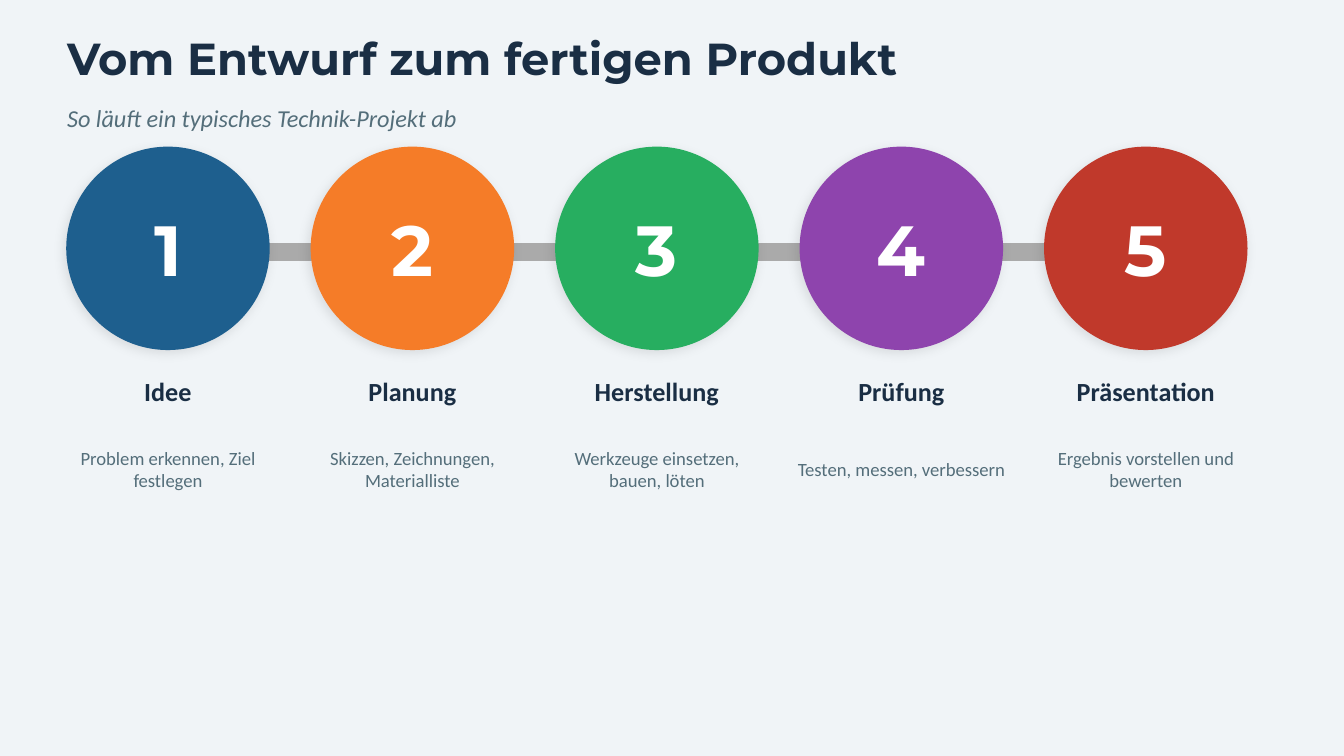
"""Build a slide showing the five steps of a technical project."""
from lxml import etree
from pptx import Presentation, util as u
from pptx.dml.color import RGBColor
from pptx.enum import shapes, text
from pptx.oxml.ns import qn

BACKGROUND = RGBColor(0xF0, 0xF4, 0xF7)
NAVY = RGBColor(0x1A, 0x2E, 0x44)
SLATE = RGBColor(0x54, 0x6E, 0x7A)
GREY = RGBColor(0xAA, 0xAA, 0xAA)
WHITE = RGBColor(0xFF, 0xFF, 0xFF)
BLUE = RGBColor(0x1E, 0x5F, 0x8E)
ORANGE = RGBColor(0xF5, 0x7C, 0x28)
GREEN = RGBColor(0x27, 0xAE, 0x60)
PURPLE = RGBColor(0x8E, 0x44, 0xAD)
RED = RGBColor(0xC0, 0x39, 0x2B)

STEPS = [
    ("Idee", "Problem erkennen, Ziel festlegen", BLUE),
    ("Planung", "Skizzen, Zeichnungen, Materialliste", ORANGE),
    ("Herstellung", "Werkzeuge einsetzen, bauen, löten", GREEN),
    ("Prüfung", "Testen, messen, verbessern", PURPLE),
    ("Präsentation", "Ergebnis vorstellen und bewerten", RED),
]
LEFT, PITCH, DIAMETER, LABEL_W = 1.27, 4.62, 3.81, 4.06


def write(sp, content, size, color, font="Calibri", bold=False, italic=False,
          align=text.PP_ALIGN.CENTER):
    tf = sp.text_frame
    tf.word_wrap = True
    tf.auto_size = text.MSO_AUTO_SIZE.NONE
    tf.vertical_anchor = text.MSO_ANCHOR.MIDDLE
    tf.margin_left = tf.margin_right = tf.margin_top = tf.margin_bottom = 0
    p = tf.paragraphs[0]
    p.alignment = align
    r = p.add_run()
    r.text = content
    r.font.name, r.font.size = font, u.Pt(size)
    r.font.bold, r.font.italic = bold, italic
    r.font.color.rgb = color


def add_solid(s, kind, x, y, w, h, color):
    sp = s.shapes.add_shape(kind, u.Cm(x), u.Cm(y), u.Cm(w), u.Cm(h))
    sp.shadow.inherit = False
    sp.fill.solid()
    sp.fill.fore_color.rgb = color
    sp.line.color.rgb = color
    sp.line.width = u.Pt(1)
    return sp


prs = Presentation()
prs.slide_width, prs.slide_height = u.Cm(25.4), u.Cm(14.29)
s = prs.slides.add_slide(prs.slide_layouts[5])
s.background.fill.solid()
s.background.fill.fore_color.rgb = BACKGROUND

title = s.shapes.title
title.left, title.top = u.Cm(LEFT), u.Cm(0.38)
title.width, title.height = u.Cm(22.86), u.Cm(1.4)
write(title, "Vom Entwurf zum fertigen Produkt", 24, NAVY, font="Montserrat",
      bold=True, align=text.PP_ALIGN.LEFT)

subtitle = s.shapes.add_textbox(u.Cm(LEFT), u.Cm(1.83), u.Cm(22.86), u.Cm(0.81))
write(subtitle, "So läuft ein typisches Technik-Projekt ab", 13, SLATE,
      italic=True, align=text.PP_ALIGN.LEFT)

for i, (name, detail, color) in enumerate(STEPS):
    x = LEFT + i * PITCH
    if i < len(STEPS) - 1:
        add_solid(s, shapes.MSO_SHAPE.RECTANGLE, x + 3.68, 4.62, 0.94, 0.3, GREY)

    circle = add_solid(s, shapes.MSO_SHAPE.OVAL, x, 2.79, DIAMETER, DIAMETER, color)
    effects = circle._element.spPr.find(qn("a:effectLst"))
    shadow = etree.SubElement(effects, qn("a:outerShdw"), blurRad=str(u.Pt(6)),
                              dist=str(u.Pt(2)), dir="8100000", algn="bl",
                              rotWithShape="0")
    black = etree.SubElement(shadow, qn("a:srgbClr"), val="000000")
    etree.SubElement(black, qn("a:alpha"), val="10000")
    write(circle, str(i + 1), 38, WHITE, font="Montserrat", bold=True)

    label_x = x + (DIAMETER - LABEL_W) / 2
    label = s.shapes.add_textbox(u.Cm(label_x), u.Cm(6.86), u.Cm(LABEL_W), u.Cm(1.07))
    write(label, name, 14, NAVY, bold=True)
    note = s.shapes.add_textbox(u.Cm(label_x), u.Cm(7.98), u.Cm(LABEL_W), u.Cm(1.78))
    write(note, detail, 10, SLATE)

prs.save("out.pptx")
